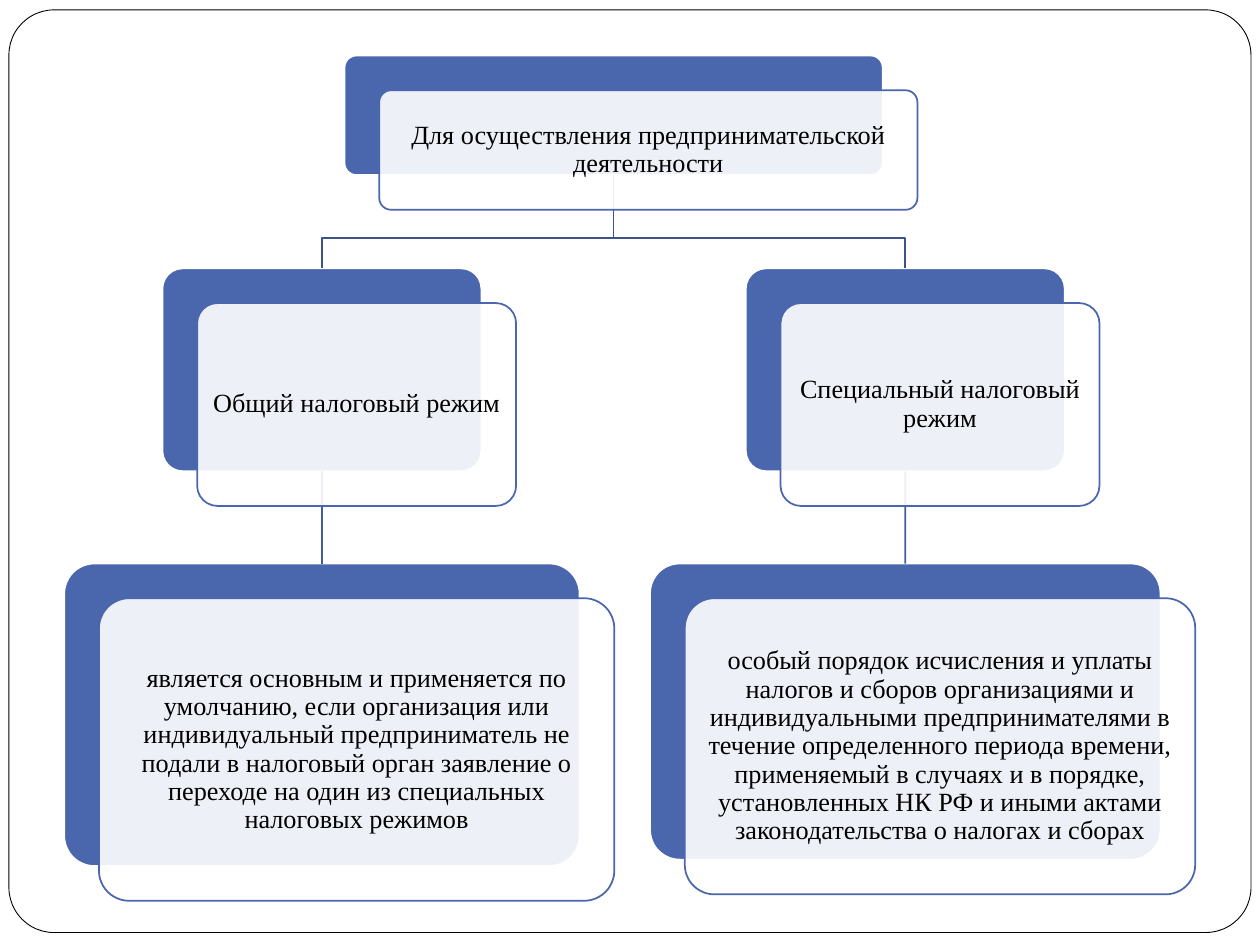
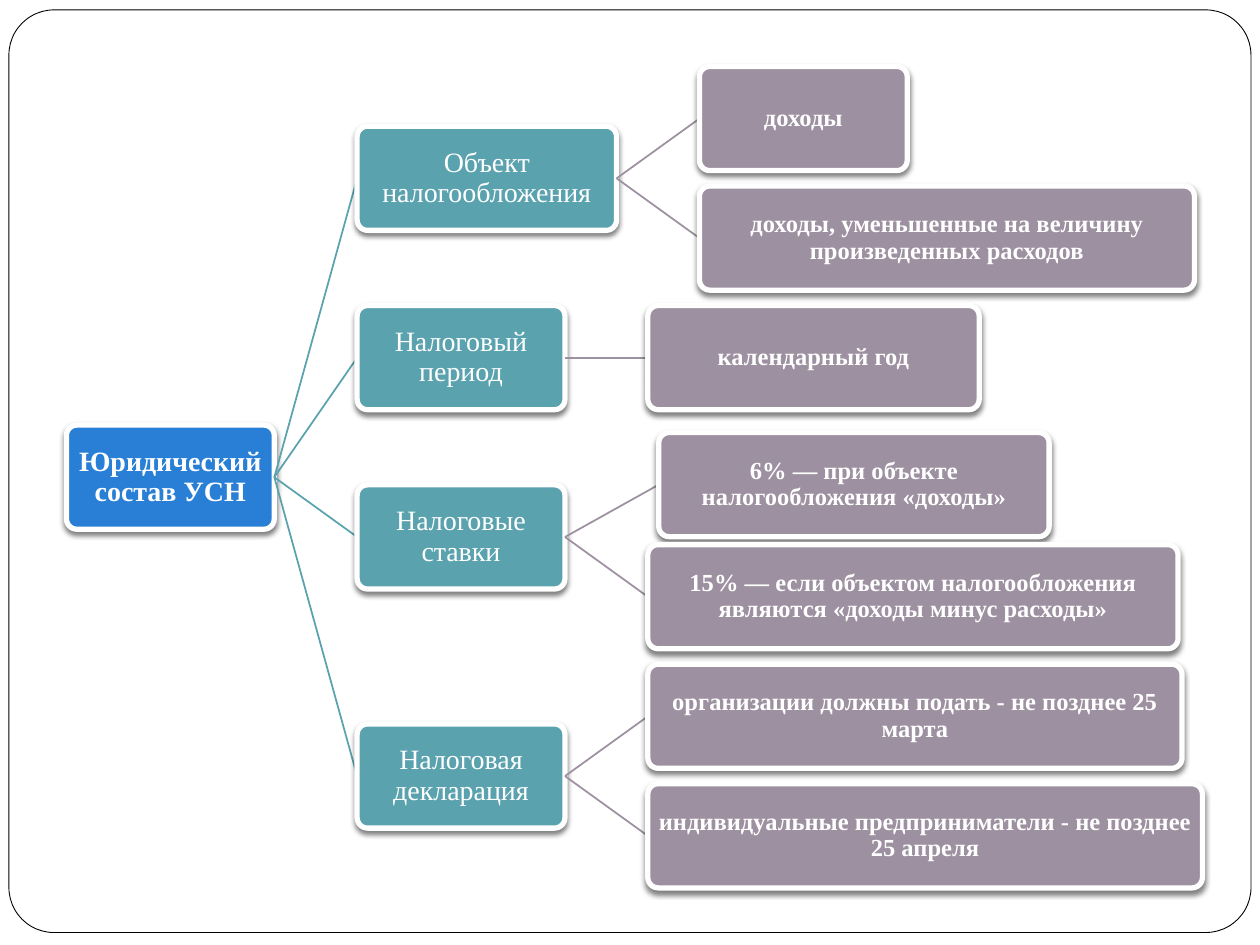
import dataclasses

import lxml.etree
import pptx
import pptx.dml.color
import pptx.enum.shapes
import pptx.enum.text
import pptx.oxml.ns
import pptx.util

Cm = pptx.util.Cm
Pt = pptx.util.Pt
qn = pptx.oxml.ns.qn


@dataclasses.dataclass(frozen=True)
class Theme:
    font: str = "Times New Roman"
    white: str = "FFFFFF"
    black: str = "000000"
    card: str = "4A66AC"
    card_branch: str = "3B528A"
    card_link: str = "435D9C"
    root: str = "297FD5"
    topic: str = "5AA2AE"
    detail: str = "9D90A0"
    card_size: int = 15
    topic_size: int = 16
    detail_size: int = 14
    corner: float = 0.1
    line: float = 1
    node_border: float = 3
    frame_line: float = 0.5


@dataclasses.dataclass(frozen=True)
class Box:
    left: float
    top: float
    width: float
    height: float

    def inner(self, left, top, width, height):
        return Box(self.left + left, self.top + top, width, height)

    def lengths(self):
        return [Cm(value) for value in (self.left, self.top, self.width, self.height)]


THEME = Theme()
FRAME_BOX = Box(0.18, 0.2, 25.04, 18.6)
REGIMES_BOX = Box(1.3, 1.12, 22.81, 17.02)
TREE_BOX = Box(1.34, 1.34, 22.91, 16.56)

COLUMN_CENTRES = (5.19, 16.95)
CARD_SHIFT = 0.7
CARD_TOPS = (0, 4.29, 10.24)
BRANCH_TOP = 3.68
HEADING = "Для осуществления предпринимательской деятельности"
REGIMES = (
    (
        "Общий налоговый режим",
        "является основным и применяется по умолчанию, если организация или "
        "индивидуальный предприниматель не подали в налоговый орган заявление о "
        "переходе на один из специальных налоговых режимов",
        (10.39, 6.1),
    ),
    (
        "Специальный налоговый режим",
        "особый порядок исчисления и уплаты налогов и сборов организациями и "
        "индивидуальными предпринимателями в течение определенного периода времени, "
        "применяемый в случаях и в порядке, установленных НК РФ и иными актами "
        "законодательства о налогах и сборах",
        (10.29, 5.97),
    ),
)

NODE_WIDTH = 4.19
NODE_HEIGHT = 2.1
NODE_GAP = 1.67
ROW_STEP = 2.41


@dataclasses.dataclass(frozen=True)
class Detail:
    text: str
    width: float
    shift: tuple = (0, 0)


TOPICS = (
    ("Объект налогообложения", 5.23, (
        Detail("доходы", NODE_WIDTH),
        Detail("доходы, уменьшенные на величину произведенных расходов", 9.98),
    )),
    ("Налоговый период", NODE_WIDTH, (
        Detail("календарный год", 6.68),
    )),
    ("Налоговые ставки", NODE_WIDTH, (
        Detail("6% — при объекте налогообложения «доходы»", 7.87, (0.22, 0.15)),
        Detail("15% — если объектом налогообложения являются «доходы минус расходы»", 10.69),
    )),
    ("Налоговая декларация", NODE_WIDTH, (
        Detail("организации должны подать - не позднее 25 марта", 10.77),
        Detail("индивидуальные предприниматели - не позднее 25 апреля", 11.18),
    )),
)


def rgb(value):
    return pptx.dml.color.RGBColor.from_string(value)


def write_text(shape, text, *, size, color, bold=False, inset=0.15):
    frame = shape.text_frame
    frame.word_wrap = True
    frame.vertical_anchor = pptx.enum.text.MSO_ANCHOR.MIDDLE
    frame.margin_left = frame.margin_right = Cm(inset)
    frame.margin_top = frame.margin_bottom = Cm(inset)
    paragraph = frame.paragraphs[0]
    paragraph.alignment = pptx.enum.text.PP_ALIGN.CENTER
    paragraph.line_spacing = 0.9
    run = paragraph.add_run()
    run.text = text
    run.font.name = THEME.font
    run.font.size = Pt(size)
    run.font.bold = bold
    run.font.color.rgb = rgb(color)


def set_line(item, color, width):
    item.line.color.rgb = rgb(color)
    item.line.width = Pt(width)


def add_rounded(slide, box, *, fill, line, line_width=THEME.line, corner=THEME.corner):
    shape = slide.shapes.add_shape(
        pptx.enum.shapes.MSO_SHAPE.ROUNDED_RECTANGLE, *box.lengths())
    shape.adjustments[0] = corner
    shape.fill.solid()
    shape.fill.fore_color.rgb = rgb(fill)
    set_line(shape, line, line_width)
    shape.shadow.inherit = False
    return shape


def add_alpha(color_element, percent):
    lxml.etree.SubElement(color_element, qn("a:alpha"), val=str(percent * 1000))


def set_opacity(shape, percent):
    fill = shape._element.spPr.find(qn("a:solidFill"))
    add_alpha(fill.find(qn("a:srgbClr")), percent)


def add_drop_shadow(shape):
    effects = shape._element.spPr.find(qn("a:effectLst"))
    shadow = lxml.etree.SubElement(
        effects, qn("a:outerShdw"), blurRad=str(Pt(3)), dist=str(Pt(2)),
        dir="5400000", rotWithShape="0")
    color = lxml.etree.SubElement(shadow, qn("a:srgbClr"), val=THEME.black)
    add_alpha(color, 50)


def start_connector(slide, shape, site, color):
    connector = slide.shapes.add_connector(
        pptx.enum.shapes.MSO_CONNECTOR.STRAIGHT, 0, 0, 0, 0)
    set_line(connector, color, THEME.line)
    lxml.etree.SubElement(connector._element.spPr, qn("a:effectLst"))
    connector.begin_connect(shape, site)
    return connector


def add_branch(slide, parent, child, middle):
    start_x = parent.left + parent.width // 2
    end_x = child.left + child.width // 2
    builder = slide.shapes.build_freeform(start_x, parent.top + parent.height)
    builder.add_line_segments(
        [(start_x, middle), (end_x, middle), (end_x, child.top)], close=False)
    branch = builder.convert_to_shape()
    branch.fill.background()
    set_line(branch, THEME.card_branch, THEME.line)
    branch.shadow.inherit = False


def add_frame(slide, box):
    add_rounded(slide, box, fill=THEME.white, line=THEME.black,
                line_width=THEME.frame_line, corner=0.049)


def add_card_front(slide, box, text):
    front_box = box.inner(CARD_SHIFT, CARD_SHIFT, box.width, box.height)
    front = add_rounded(slide, front_box, fill=THEME.white, line=THEME.card)
    set_opacity(front, 90)
    write_text(front, text, size=THEME.card_size, color=THEME.black)


def add_regimes(slide, box):
    cards = []

    def add_card_back(centre, level, size, text):
        width, height = size
        card_box = box.inner(centre - width / 2, CARD_TOPS[level], width, height)
        cards.append((card_box, text))
        return add_rounded(slide, card_box, fill=THEME.card, line=THEME.white)

    heading = add_card_back(sum(COLUMN_CENTRES) / 2, 0, (10.85, 2.41), HEADING)
    for centre, (name, description, size) in zip(COLUMN_CENTRES, REGIMES):
        regime = add_card_back(centre, 1, (6.43, 4.09), name)
        detail = add_card_back(centre, 2, size, description)
        add_branch(slide, heading, regime, Cm(box.top + BRANCH_TOP))
        start_connector(slide, regime, 2, THEME.card_link).end_connect(detail, 0)
    for card_box, text in cards:
        add_card_front(slide, card_box, text)


def add_node(slide, box, text, *, fill, size, bold=False, parent=None):
    connector = start_connector(slide, parent, 3, fill) if parent else None
    node = add_rounded(slide, box, fill=fill, line=THEME.white,
                       line_width=THEME.node_border)
    add_drop_shadow(node)
    write_text(node, text, size=size, color=THEME.white, bold=bold, inset=0.03)
    if connector:
        connector.end_connect(node, 1)
    return node


def add_tree(slide, box):
    topic_tops = []
    row = 0
    for _, _, details in TOPICS:
        topic_tops.append((row + (len(details) - 1) / 2) * ROW_STEP)
        row += len(details)

    root_top = (topic_tops[0] + topic_tops[-1]) / 2
    root = add_node(slide, box.inner(0, root_top, NODE_WIDTH, NODE_HEIGHT),
                    "Юридический состав УСН", fill=THEME.root,
                    size=THEME.topic_size, bold=True)
    topic_left = NODE_WIDTH + NODE_GAP
    row = 0
    for topic_top, (name, width, details) in zip(topic_tops, TOPICS):
        topic = add_node(slide, box.inner(topic_left, topic_top, width, NODE_HEIGHT),
                         name, fill=THEME.topic, size=THEME.topic_size, parent=root)
        for detail in details:
            shift_x, shift_y = detail.shift
            detail_box = box.inner(topic_left + width + NODE_GAP + shift_x,
                                   row * ROW_STEP + shift_y, detail.width, NODE_HEIGHT)
            add_node(slide, detail_box, detail.text, fill=THEME.detail,
                     size=THEME.detail_size, bold=True, parent=topic)
            row += 1


def main():
    presentation = pptx.Presentation()
    presentation.slide_width = Cm(25.4)
    presentation.slide_height = Cm(19.05)
    blank_layout = presentation.slide_layouts[6]
    for add_content, box in ((add_regimes, REGIMES_BOX), (add_tree, TREE_BOX)):
        slide = presentation.slides.add_slide(blank_layout)
        add_frame(slide, FRAME_BOX)
        add_content(slide, box)
    presentation.save("out.pptx")


if __name__ == "__main__":
    main()
